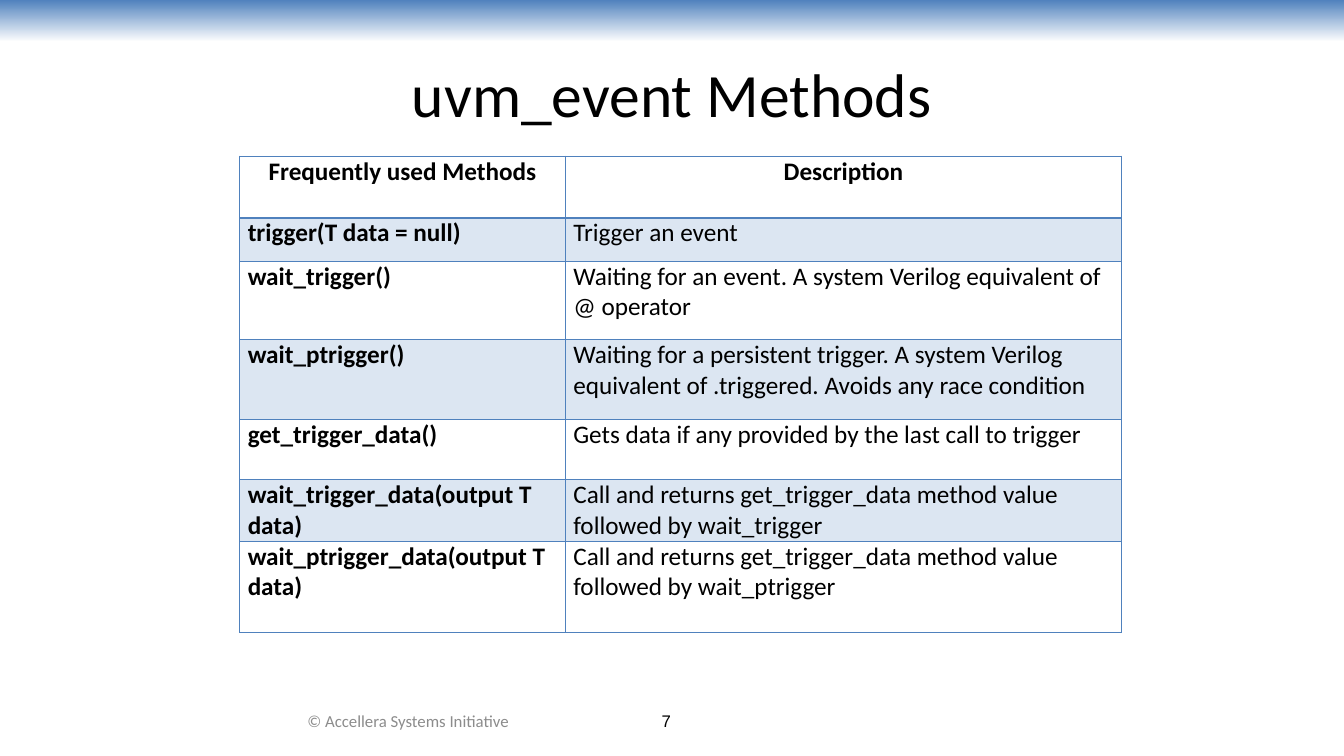
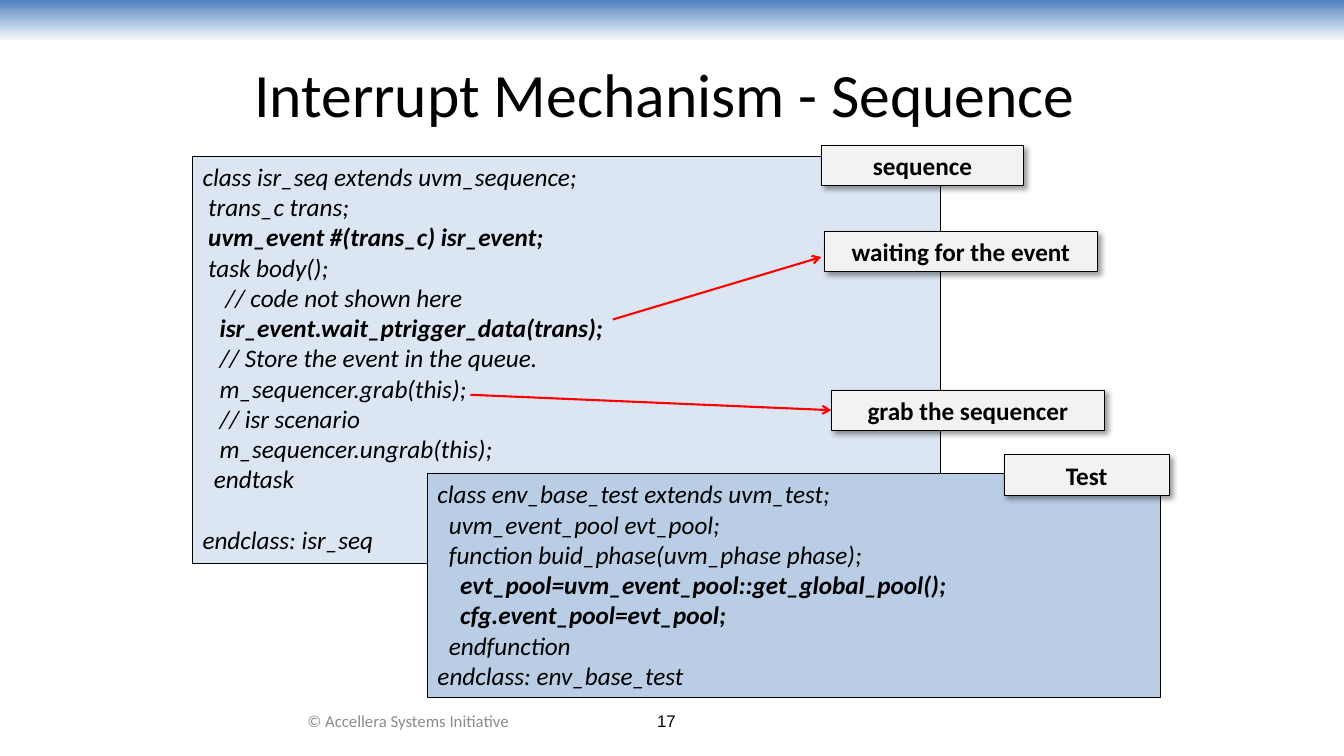
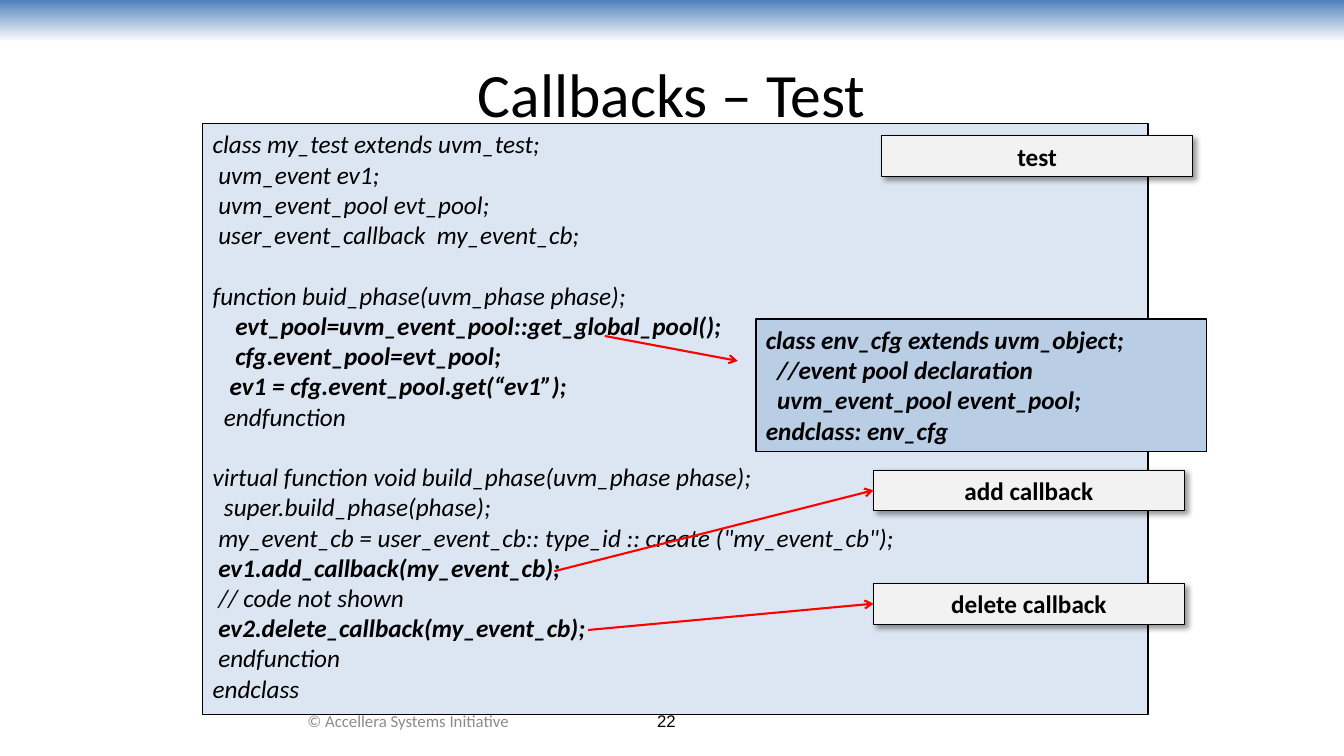
"""Build three slides on UVM events: a method table and two code listings."""
from lxml.etree import SubElement as Sub
from pptx import Presentation
from pptx.dml.color import RGBColor as RGB
from pptx.enum.shapes import MSO_CONNECTOR as LINE, MSO_SHAPE as SHAPE
from pptx.enum.text import MSO_ANCHOR as ANCHOR, PP_ALIGN as ALIGN
from pptx.oxml.ns import qn
from pptx.util import Pt

BLUE, PALE, MID, GREY = "4F81BD", "DCE6F2", "B9CDE5", "F2F2F2"
BLACK, WHITE, RED, DIM = "000000", "FFFFFF", "FF0000", "8C8C8C"
BASE = {"name": "Calibri", "size": Pt(18), "bold": False, "italic": False}
CODE = {"italic": True}
BOLD = {"bold": True}


def tint(fill, shade):
    """Give a fill, line fill or font fill one solid colour."""
    fill.solid()
    fill.fore_color.rgb = RGB.from_string(shade)


def write(frame, text, align, look, shade=BLACK):
    """Write lines: a leading * makes one bold, an empty one becomes a gap."""
    frame.word_wrap = True
    para, gap = frame.paragraphs[0], False
    for row, line in enumerate(text.split("\n")):
        if not line:
            gap = True
            continue
        if row:
            para = frame.add_paragraph()
        if gap:
            para.space_before = Pt(21.6)
        gap = False
        para.alignment = align
        run = para.add_run()
        run.text = line.lstrip("*")
        style = BASE | look | (BOLD if line.startswith("*") else {})
        for key, value in style.items():
            setattr(run.font, key, value)
        tint(run.font.fill, shade)


seq_code = """class isr_seq extends uvm_sequence;
 trans_c trans;
* uvm_event #(trans_c) isr_event;
 task body();
    // code not shown here
*   isr_event.wait_ptrigger_data(trans);
   // Store the event in the queue.
   m_sequencer.grab(this);
   // isr scenario
   m_sequencer.ungrab(this);
  endtask

endclass: isr_seq"""
env_code = """class env_base_test extends uvm_test;
  uvm_event_pool evt_pool;
  function buid_phase(uvm_phase phase);
*    evt_pool=uvm_event_pool::get_global_pool();
*    cfg.event_pool=evt_pool;
  endfunction
endclass: env_base_test"""
test_code = """class my_test extends uvm_test;
 uvm_event ev1;
 uvm_event_pool evt_pool;
 user_event_callback  my_event_cb;

function buid_phase(uvm_phase phase);
*    evt_pool=uvm_event_pool::get_global_pool();
*    cfg.event_pool=evt_pool;
*   ev1 = cfg.event_pool.get(“ev1”);
  endfunction

virtual function void build_phase(uvm_phase phase);
  super.build_phase(phase);
 my_event_cb = user_event_cb:: type_id :: create ("my_event_cb");
* ev1.add_callback(my_event_cb);
 // code not shown
* ev2.delete_callback(my_event_cb);
 endfunction
endclass"""
cfg_code = """*class env_cfg extends uvm_object;
*  //event pool declaration
*  uvm_event_pool event_pool;
*endclass: env_cfg"""

pages = [
    {"title": "uvm_event Methods", "page": "7",
     "boxes": [], "tags": [], "arrows": []},
    {"title": "Interrupt Mechanism - Sequence ", "page": "17",
     "boxes": [(seq_code, PALE, (137.6, 111.6, 534.3, 290.8)),
               (env_code, MID, (305.4, 338.4, 523.6, 159.8))],
     "tags": [("sequence", 586.6, 103.8, 144.8), ("Test", 717.2, 324.8, 118),
              ("waiting for the event", 588.8, 165.2, 195.2),
              ("grab the sequencer", 593.8, 278.6, 195.2)],
     "arrows": [(437.8, 228.2, 586.6, 183.6), (336, 282, 593.8, 293)]},
    {"title": "Callbacks – Test", "page": "22",
     "boxes": [(test_code, PALE, (144.8, 88.4, 675.2, 421.8)),
               (cfg_code, MID, (540, 228, 321.8, 94.4))],
     "tags": [("test", 629.8, 97, 222), ("add callback", 624, 335.8, 222),
              ("delete callback", 624, 416.8, 222)],
     "arrows": [(432, 240, 527, 257.8), (396, 408, 624, 350.2),
                (420, 450, 624, 431.2)]},
]

deck = Presentation()
deck.slide_width, deck.slide_height = Pt(960), Pt(540)

for page in pages:
    slide = deck.slides.add_slide(deck.slide_layouts[6])
    shapes = slide.shapes
    band = shapes.add_shape(SHAPE.RECTANGLE, 0, 0, Pt(960), Pt(30))
    band.shadow.inherit = False
    band.line.fill.background()
    band.fill.gradient()
    band.fill.gradient_angle = 270
    for stop, shade in zip(band.fill.gradient_stops, (BLUE, WHITE)):
        stop.color.rgb = RGB.from_string(shade)

    for text, spot, look, shade in (
            (page["title"], (48, 21.6, 864, 90), {"size": Pt(44)}, BLACK),
            (page["page"], (384, 500.4, 184, 28.8),
             {"name": "Arial", "size": Pt(12)}, BLACK),
            ("© Accellera Systems Initiative", (175.6, 500.4, 232, 28.8),
             {"size": Pt(12)}, DIM)):
        label = shapes.add_textbox(*map(Pt, spot))
        label.text_frame.vertical_anchor = ANCHOR.MIDDLE
        write(label.text_frame, text, ALIGN.CENTER, look, shade)

    for text, shade, spot in page["boxes"]:
        box = shapes.add_shape(SHAPE.RECTANGLE, *map(Pt, spot))
        box.shadow.inherit = False
        tint(box.fill, shade)
        tint(box.line.fill, BLACK)
        box.line.width = Pt(1)
        box.text_frame.vertical_anchor = ANCHOR.TOP
        write(box.text_frame, text, ALIGN.LEFT, CODE)

    for text, left, top, width in page["tags"]:
        tag = shapes.add_shape(SHAPE.RECTANGLE, Pt(left), Pt(top),
                               Pt(width), Pt(29))
        tag.shadow.inherit = False
        glow = Sub(tag.element.spPr.find(qn("a:effectLst")),
                   qn("a:outerShdw"), blurRad=str(Pt(4)), dist=str(Pt(3)),
                   dir="2700000", algn="tl", rotWithShape="0")
        Sub(Sub(glow, qn("a:srgbClr"), val=BLACK), qn("a:alpha"), val="40000")
        tint(tag.fill, GREY)
        tint(tag.line.fill, BLACK)
        tag.line.width = Pt(0.75)
        tag.text_frame.vertical_anchor = ANCHOR.MIDDLE
        write(tag.text_frame, text, ALIGN.CENTER, BOLD)

    for ends in page["arrows"]:
        arrow = shapes.add_connector(LINE.STRAIGHT, *map(Pt, ends))
        tint(arrow.line.fill, RED)
        arrow.line.width = Pt(1.5)
        props = arrow.element.spPr
        Sub(props.find(qn("a:ln")), qn("a:tailEnd"), type="arrow")
        Sub(props, qn("a:effectLst"))

rows = [
    (44, "Frequently used Methods", "Description"),
    (31, "trigger(T data = null)", "Trigger an event"),
    (56, "wait_trigger()",
     "Waiting for an event. A system Verilog equivalent of @ operator"),
    (57, "wait_ptrigger()",
     "Waiting for a persistent trigger. A system Verilog equivalent of "
     ".triggered. Avoids any race condition"),
    (43, "get_trigger_data()",
     "Gets data if any provided by the last call to trigger"),
    (44, "wait_trigger_data(output T data)",
     "Call and returns get_trigger_data method value followed by "
     "wait_trigger"),
    (65, "wait_ptrigger_data(output T data)",
     "Call and returns get_trigger_data method value followed by "
     "wait_ptrigger"),
]
pads = {"margin_left": Pt(5.76), "margin_right": Pt(5.76),
        "margin_top": 0, "margin_bottom": 0}
grid = deck.slides[0].shapes.add_table(
    len(rows), 2, Pt(171.2), Pt(111.6), Pt(630), Pt(340)).table
grid.first_row = grid.horz_banding = False
for col, width in zip(grid.columns, (232.6, 397.4)):
    col.width = Pt(width)
for r, (height, *texts) in enumerate(rows):
    grid.rows[r].height = Pt(height)
    for c, text in enumerate(texts):
        cell = grid.cell(r, c)
        for key, value in pads.items():
            setattr(cell, key, value)
        props = cell._tc.get_or_add_tcPr()
        for side in ("lnL", "lnR", "lnT", "lnB"):
            thick = (r, side) in ((0, "lnB"), (1, "lnT"))
            edge = Sub(props, qn("a:" + side), w=str(Pt(2 if thick else 1)))
            Sub(Sub(edge, qn("a:solidFill")), qn("a:srgbClr"), val=BLUE)
        tint(cell.fill, PALE if r % 2 else WHITE)
        write(cell.text_frame, text, ALIGN.LEFT if r else ALIGN.CENTER,
              {"bold": r == 0 or c == 0})

deck.save("out.pptx")
